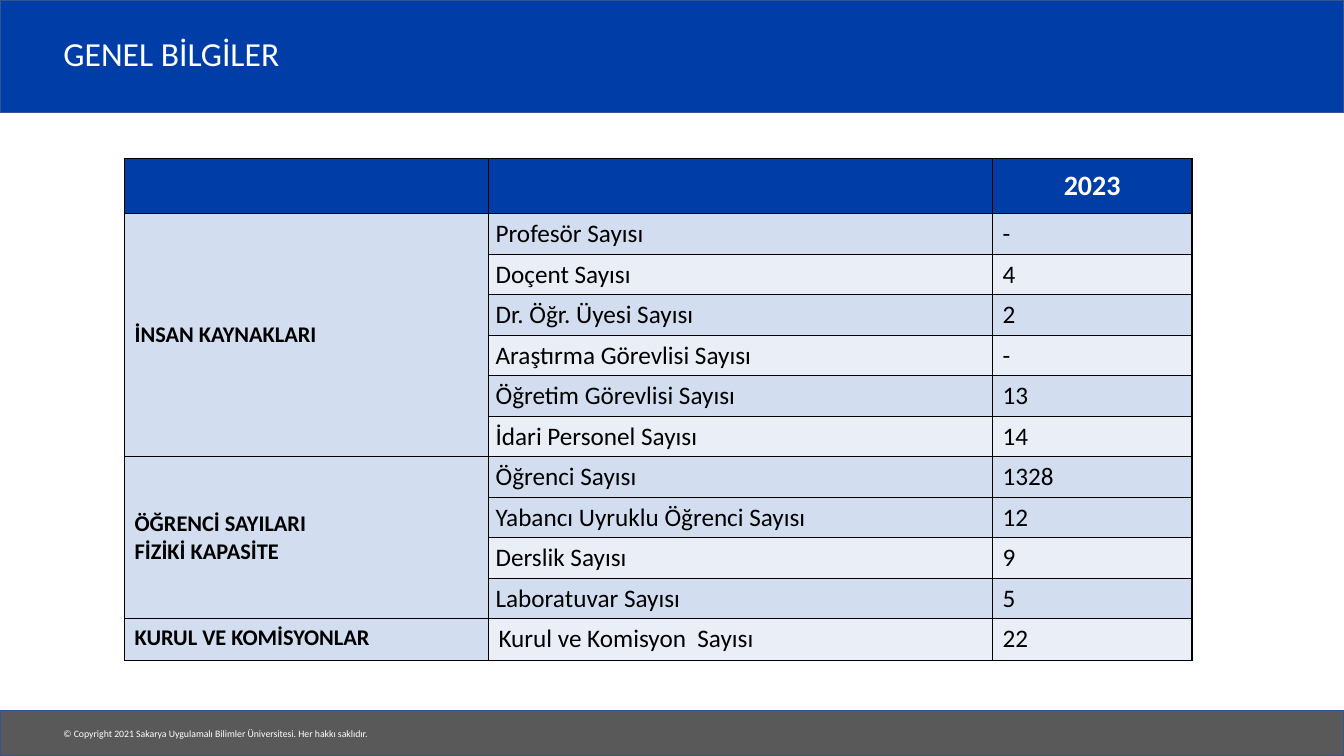
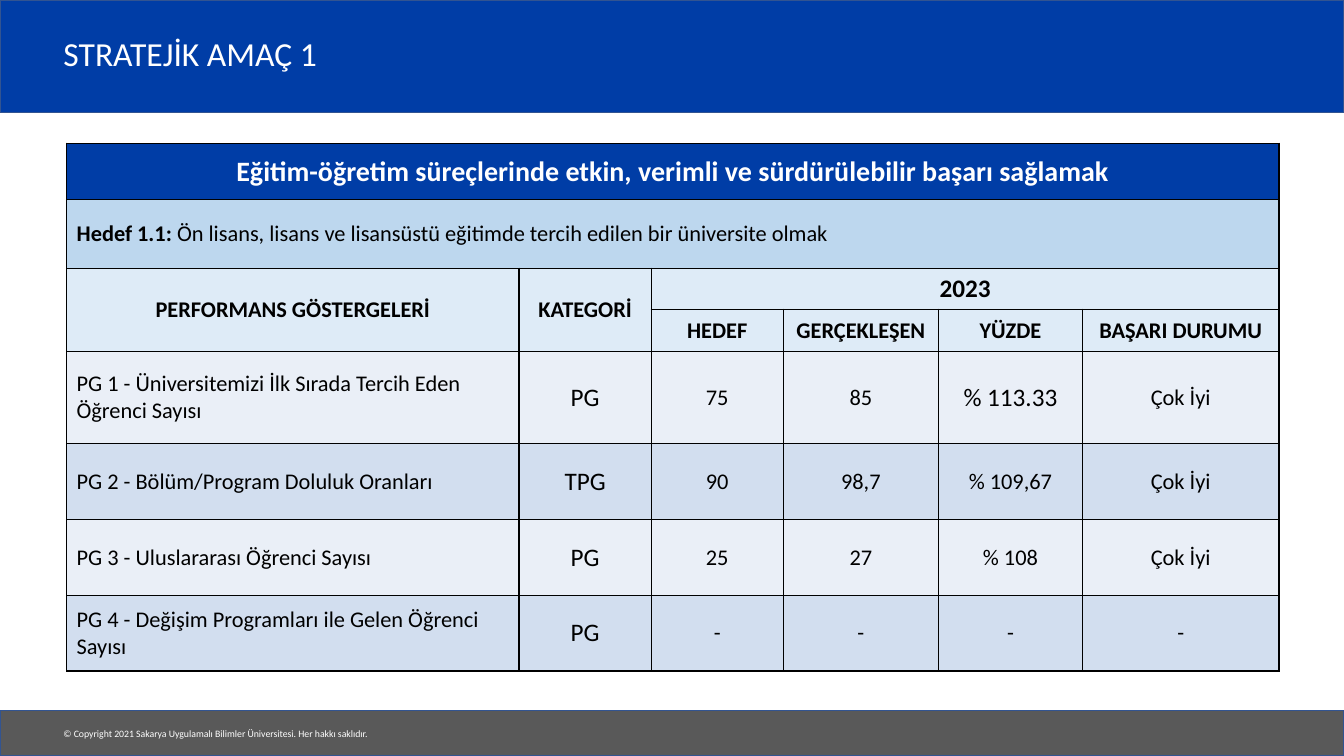
from lxml import etree
from pptx import Presentation
from pptx.dml.color import RGBColor
from pptx.enum.shapes import MSO_SHAPE
from pptx.enum.text import MSO_ANCHOR, PP_ALIGN
from pptx.oxml.ns import qn
from pptx.util import Cm, Pt

RECTANGLE = MSO_SHAPE.RECTANGLE
LEFT, CENTER, JUSTIFY = PP_ALIGN.LEFT, PP_ALIGN.CENTER, PP_ALIGN.JUSTIFY
TOP, MIDDLE = MSO_ANCHOR.TOP, MSO_ANCHOR.MIDDLE


def color(value):
    return RGBColor.from_string(value)


class Deck:
    FONT = "Calibri"
    BLUE, GRAY, OUTLINE = "003DA6", "595959", "325491"
    BLACK, WHITE = "000000", "FFFFFF"
    DARK_ROW, LIGHT_ROW = "D2DEEF", "EAEFF7"
    GOAL, HEADING = "BDD7EE", "DEEBF7"
    WIDTH, HEIGHT = 33.87, 19.05
    FOOTER = "© Copyright 2021 Sakarya Uygulamalı Bilimler Üniversitesi. Her hakkı saklıdır."

    def __init__(self):
        self.presentation = Presentation()
        self.presentation.slide_width = Cm(self.WIDTH)
        self.presentation.slide_height = Cm(self.HEIGHT)
        self.slide = None

    def add_slide(self, title):
        layout = self.presentation.slide_layouts[6]
        self.slide = self.presentation.slides.add_slide(layout)
        self.band(0, 2.84, self.BLUE)
        self.band(17.9, 1.15, self.GRAY)
        self.text(1.35, 18.21, 8.43, 0.55, self.FOOTER, 7, wrap=False)
        self.text(1.35, 0.48, 28.02, 1.85, title, 24, spacing=0.9)

    def band(self, top, height, fill):
        shape = self.slide.shapes.add_shape(
            RECTANGLE, 0, Cm(top), Cm(self.WIDTH), Cm(height))
        shape.shadow.inherit = False
        shape.fill.solid()
        shape.fill.fore_color.rgb = color(fill)
        shape.line.color.rgb = color(self.OUTLINE)
        shape.line.width = Pt(1)

    def text(self, left, top, width, height, text, size, wrap=True, spacing=1.0):
        box = self.slide.shapes.add_textbox(Cm(left), Cm(top), Cm(width), Cm(height))
        frame = box.text_frame
        frame.word_wrap = wrap
        frame.vertical_anchor = MIDDLE
        paragraph = frame.paragraphs[0]
        paragraph.text = text
        paragraph.line_spacing = spacing
        self.style(paragraph, size, self.WHITE)

    def style(self, paragraph, size, font_color, bold=False):
        font = paragraph.font
        font.name = self.FONT
        font.size = Pt(size)
        font.bold = bold
        font.color.rgb = color(font_color)

    def table(self, left, top, widths, heights):
        frame = self.slide.shapes.add_table(
            len(heights), len(widths), Cm(left), Cm(top),
            Cm(sum(widths)), Cm(sum(heights)))
        table = frame.table
        table.first_row = False
        table.horz_banding = False
        for column, width in zip(table.columns, widths):
            column.width = Cm(width)
        for row, height in zip(table.rows, heights):
            row.height = Cm(height)
        for cell in table.iter_cells():
            self.borders(cell)
        return table

    def borders(self, cell):
        properties = cell._tc.get_or_add_tcPr()
        for side in ("a:lnL", "a:lnR", "a:lnT", "a:lnB"):
            line = etree.SubElement(properties, qn(side), w=str(Pt(1)))
            fill = etree.SubElement(line, qn("a:solidFill"))
            etree.SubElement(fill, qn("a:srgbClr"), val=self.BLACK)

    def cell(self, table, row, column, text, fill, size=16, bold=False, align=CENTER,
             font_color=BLACK, anchor=MIDDLE, span=(1, 1), lead="", margin=None):
        cell = table.cell(row, column)
        if span != (1, 1):
            cell.merge(table.cell(row + span[0] - 1, column + span[1] - 1))
        cell.fill.solid()
        cell.fill.fore_color.rgb = color(fill)
        cell.vertical_anchor = anchor
        if margin is not None:
            cell.margin_left = cell.margin_right = Cm(margin)
            cell.margin_top = cell.margin_bottom = 0
        paragraph = cell.text_frame.paragraphs[0]
        paragraph.alignment = align
        if lead:
            run = paragraph.add_run()
            run.text = lead
            run.font.bold = True
        if text:
            paragraph.add_run().text = text.split("\n")[0]
            for line in text.split("\n")[1:]:
                paragraph.add_line_break()
                paragraph.add_run().text = line
        self.style(paragraph, size, font_color, bold)


def general_information(deck):
    deck.add_slide("GENEL BİLGİLER")
    groups = [
        ("İNSAN KAYNAKLARI", [
            ("Profesör Sayısı", "-"), ("Doçent Sayısı", "4"),
            ("Dr. Öğr. Üyesi Sayısı", "2"), ("Araştırma Görevlisi Sayısı", "-"),
            ("Öğretim Görevlisi Sayısı", "13"), ("İdari Personel Sayısı", "14")]),
        ("ÖĞRENCİ SAYILARI\nFİZİKİ KAPASİTE", [
            ("Öğrenci Sayısı", "1328"), ("Yabancı Uyruklu Öğrenci Sayısı", "12"),
            ("Derslik Sayısı", "9"), ("Laboratuvar Sayısı", "5")]),
        ("KURUL VE KOMİSYONLAR", [("Kurul ve Komisyon  Sayısı", "22")]),
    ]
    light_rows = (2, 4, 6, 9, 11)
    table = deck.table(3.14, 4, [9.17, 12.7, 5.03], [1.39] + [1.02] * 10 + [1.06])
    for column, heading in enumerate(["", "", "2023"]):
        deck.cell(table, 0, column, heading, deck.BLUE, 20, True, font_color=deck.WHITE)
    row = 1
    for group, entries in groups:
        single = len(entries) == 1
        anchor = TOP if single else MIDDLE
        deck.cell(table, row, 0, group, deck.DARK_ROW, 16, True, LEFT,
                  anchor=anchor, span=(len(entries), 1))
        for label, value in entries:
            fill = deck.LIGHT_ROW if row in light_rows else deck.DARK_ROW
            deck.cell(table, row, 1, label, fill, 18, align=JUSTIFY, anchor=anchor,
                      margin=None if single else 0.18)
            deck.cell(table, row, 2, value, fill, 18, align=LEFT, anchor=anchor)
            row += 1


def strategic_goal(deck):
    deck.add_slide("STRATEJİK AMAÇ 1")
    table = deck.table(1.68, 3.61, [11.4, 3.33, 3.33, 3.91, 3.63, 4.95],
                       [1.42, 1.73, 1.03, 1.07, 2.32] + [1.91] * 3)
    deck.cell(table, 0, 0,
              "Eğitim-öğretim süreçlerinde etkin, verimli ve sürdürülebilir başarı sağlamak",
              deck.BLUE, 20, True, font_color=deck.WHITE, span=(1, 6))
    deck.cell(table, 1, 0,
              "Ön lisans, lisans ve lisansüstü eğitimde tercih edilen bir üniversite olmak",
              deck.GOAL, align=LEFT, span=(1, 6), lead="Hedef 1.1: ")
    for column, heading in enumerate(["PERFORMANS GÖSTERGELERİ", "KATEGORİ"]):
        deck.cell(table, 2, column, heading, deck.HEADING, bold=True, span=(2, 1))
    deck.cell(table, 2, 2, "2023", deck.HEADING, 18, True, span=(1, 4))
    for column, heading in enumerate(["HEDEF", "GERÇEKLEŞEN", "YÜZDE", "BAŞARI DURUMU"], 2):
        deck.cell(table, 3, column, heading, deck.HEADING, bold=True)
    indicators = [
        ("PG 1 - Üniversitemizi İlk Sırada Tercih Eden Öğrenci Sayısı",
         "PG", "75", "85", "% 113.33", "Çok İyi"),
        ("PG 2 - Bölüm/Program Doluluk Oranları", "TPG", "90", "98,7", "% 109,67", "Çok İyi"),
        ("PG 3 - Uluslararası Öğrenci Sayısı", "PG", "25", "27", "% 108", "Çok İyi"),
        ("PG 4 - Değişim Programları ile Gelen Öğrenci Sayısı", "PG", "-", "-", "-", "-"),
    ]
    for row, values in enumerate(indicators, 4):
        fill = deck.DARK_ROW if row % 2 else deck.LIGHT_ROW
        for column, value in enumerate(values):
            large = column == 1 or (row, column) == (4, 4)
            deck.cell(table, row, column, value, fill, 18 if large else 16,
                      align=CENTER if column else LEFT)


def main():
    deck = Deck()
    general_information(deck)
    strategic_goal(deck)
    deck.presentation.save("out.pptx")


if __name__ == "__main__":
    main()
